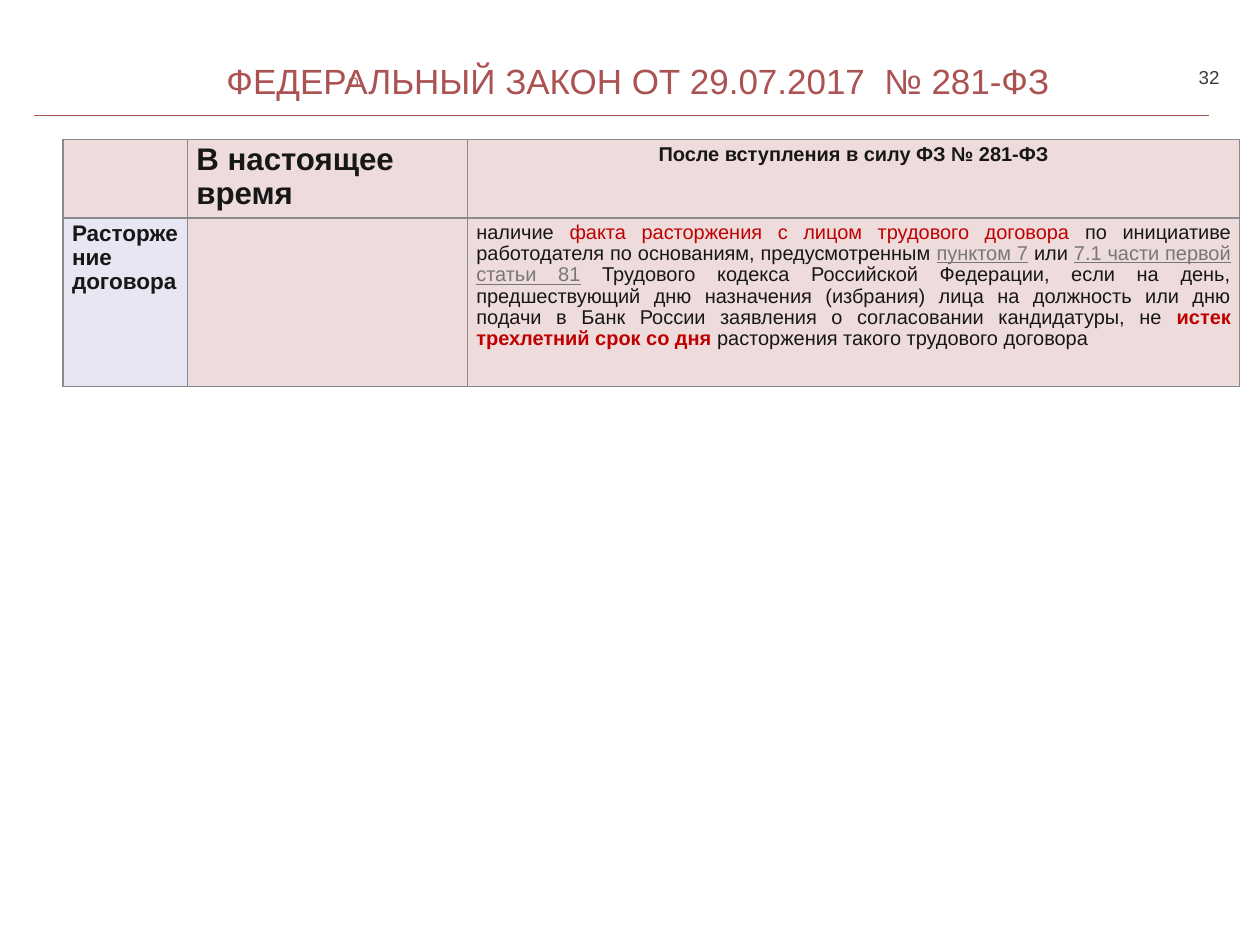
"""Build the slide on Federal Law 281-FZ with its comparison table."""
from lxml.etree import SubElement
from pptx import Presentation
from pptx.dml.color import RGBColor
from pptx.enum.shapes import MSO_CONNECTOR
from pptx.enum.text import MSO_ANCHOR, MSO_AUTO_SIZE, PP_ALIGN
from pptx.oxml.ns import qn
from pptx.util import Pt

theme = {
    "font": "Arial",
    "accent": "AB5253", "ink": "181717", "red": "C00000", "link": "77777A",
    "number": "3C3C3D", "border": "8A8A8D", "pink": "EEDCDC", "blue": "E7E7F4",
    "title": 28, "head": 25, "label": 18, "body": 16, "page": 15, "mark": 11,
}


def write(par, text, size, color, **form):
    run = par.add_run()
    run.text = text
    look = {"name": theme["font"], "size": Pt(theme[size]), "bold": False, **form}
    for key, value in look.items():
        setattr(run.font, key, value)
    run.font.color.rgb = RGBColor.from_string(theme[color])


def edge(cell, side, width):
    line = SubElement(cell._tc.get_or_add_tcPr(), qn(f"a:ln{side}"), w=str(Pt(width)))
    fill = SubElement(line, qn("a:solidFill"))
    SubElement(fill, qn("a:srgbClr"), val=theme["border"])


deck = Presentation()
deck.slide_width, deck.slide_height = Pt(1008), Pt(756)
slide = deck.slides.add_slide(deck.slide_layouts[5])
shapes = slide.shapes

for start, end in [(67, 27.5), (967.5, 67)]:
    rule = shapes.add_connector(MSO_CONNECTOR.STRAIGHT, Pt(start), Pt(92), Pt(end), Pt(92))
    rule.line.color.rgb = RGBColor.from_string(theme["accent"])
    rule.line.width = Pt(0.25)
    SubElement(rule._element.spPr, qn("a:effectLst"))

widths, heights = [99.5, 224, 618], [62.6, 135.4]
frame = shapes.add_table(2, 3, Pt(50.4), Pt(111.6), Pt(sum(widths)), Pt(sum(heights)))
table = frame.table
for col, width in zip(table.columns, widths):
    col.width = Pt(width)
for row, height in zip(table.rows, heights):
    row.height = Pt(height)

bold = {"bold": True}
under = {"underline": True}
clause = [
    ("наличие ", "body", "ink", {}),
    ("факта расторжения с лицом трудового договора ", "body", "red", {}),
    ("по инициативе работодателя по основаниям, предусмотренным ", "body", "ink", {}),
    ("пунктом 7", "body", "link", under),
    (" или ", "body", "ink", {}),
    ("7.1 части первой статьи 81", "body", "link", under),
    (" Трудового кодекса Российской Федерации, если на день, предшествующий дню "
     "назначения (избрания) лица на должность или дню подачи в Банк России заявления "
     "о согласовании кандидатуры, не ", "body", "ink", {}),
    ("истек трехлетний срок со дня ", "body", "red", bold),
    ("расторжения такого трудового договора", "body", "ink", {}),
]
cells = {
    (0, 0): ("pink", PP_ALIGN.LEFT, []),
    (0, 1): ("pink", PP_ALIGN.LEFT, [("В настоящее время", "head", "ink", bold)]),
    (0, 2): ("pink", PP_ALIGN.CENTER,
             [("После вступления в силу ФЗ № 281-ФЗ", "body", "ink", bold)]),
    (1, 0): ("blue", PP_ALIGN.LEFT, [("Расторжение договора", "label", "ink", bold)]),
    (1, 1): ("pink", PP_ALIGN.LEFT, []),
    (1, 2): ("pink", PP_ALIGN.JUSTIFY, clause),
}
for (row, col), (fill, align, runs) in cells.items():
    cell = table.cell(row, col)
    for side in "LRTB":
        edge(cell, side, 2 if row == 0 and side == "B" else 1)
    cell.fill.solid()
    cell.fill.fore_color.rgb = RGBColor.from_string(theme[fill])
    par = cell.text_frame.paragraphs[0]
    par.alignment, par.line_spacing = align, 0.96
    for text, size, color, form in runs:
        write(par, text, size, color, **form)

mark = shapes.add_textbox(0, 0, 0, 0)
page = shapes.add_textbox(0, 0, 0, 0)
texts = [
    (mark, (278.6, 37.4, 295.2, 57.6), "О", "mark", "accent", PP_ALIGN.LEFT, 0.9),
    (shapes.title, (88, 37.4, 844.6, 57.6), "ФЕДЕРАЛЬНЫЙ ЗАКОН ОТ 29.07.2017  № 281-ФЗ",
     "title", "accent", PP_ALIGN.CENTER, 0.9),
    (page, (936, 36, 39.6, 51.8), "32", "page", "number", PP_ALIGN.RIGHT, 1.0),
]
layout = {
    "word_wrap": True, "auto_size": MSO_AUTO_SIZE.NONE,
    "vertical_anchor": MSO_ANCHOR.MIDDLE, "margin_left": 0, "margin_right": 0,
    "margin_top": 0, "margin_bottom": 0,
}
for box, place, text, size, color, align, space in texts:
    for key, value in zip(("left", "top", "width", "height"), place):
        setattr(box, key, Pt(value))
    for key, value in layout.items():
        setattr(box.text_frame, key, value)
    par = box.text_frame.paragraphs[0]
    par.alignment, par.line_spacing = align, space
    write(par, text, size, color)

deck.save("out.pptx")
